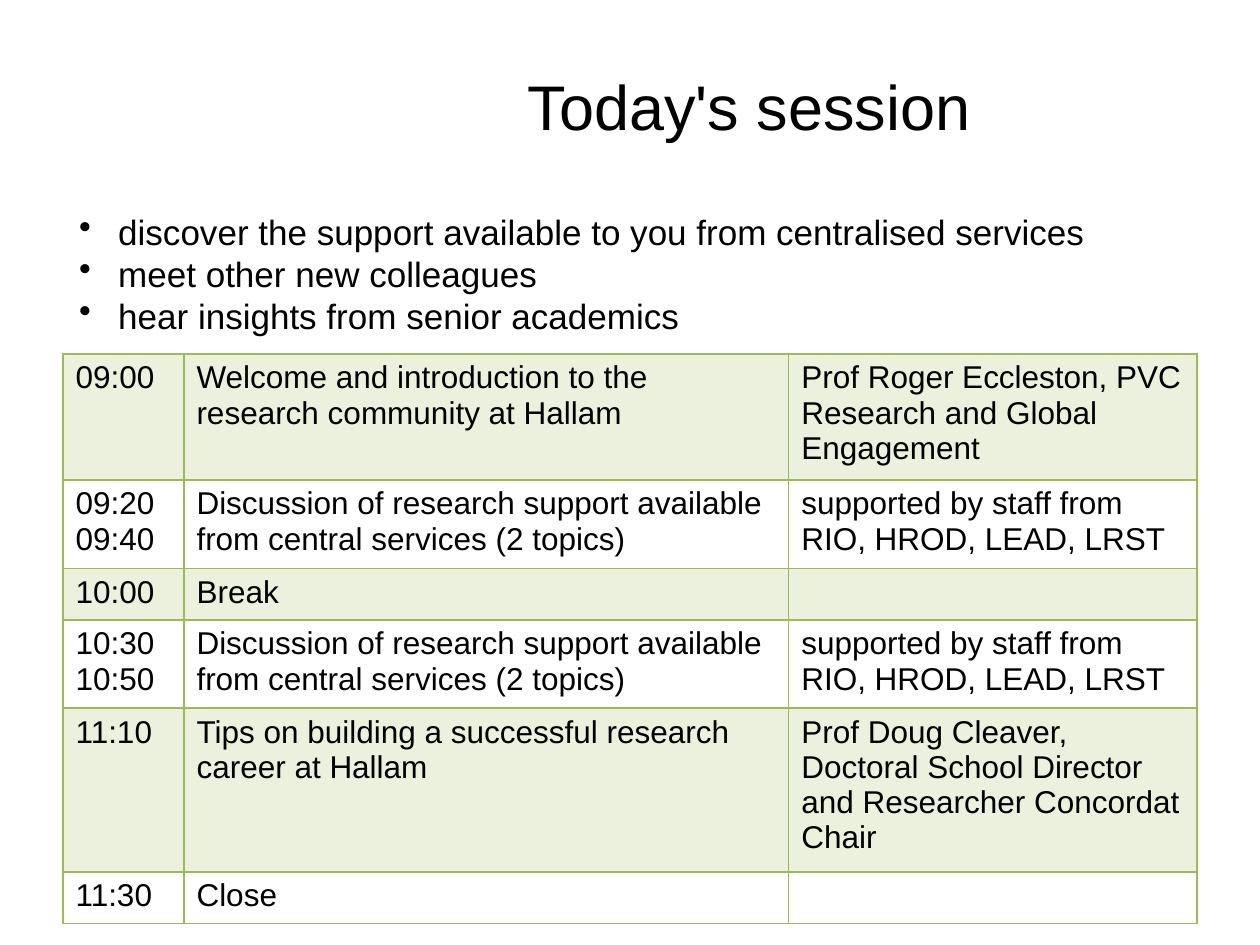
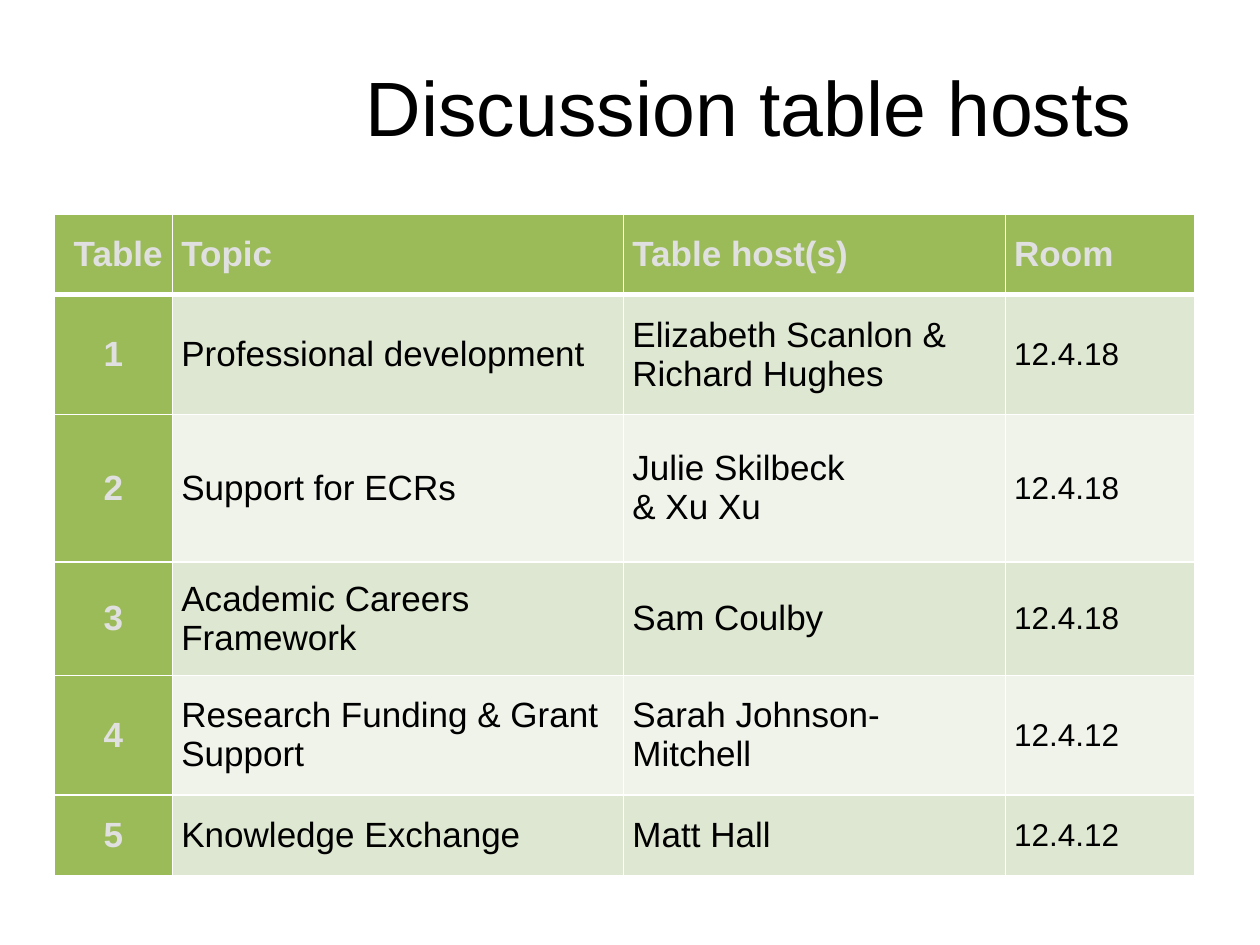
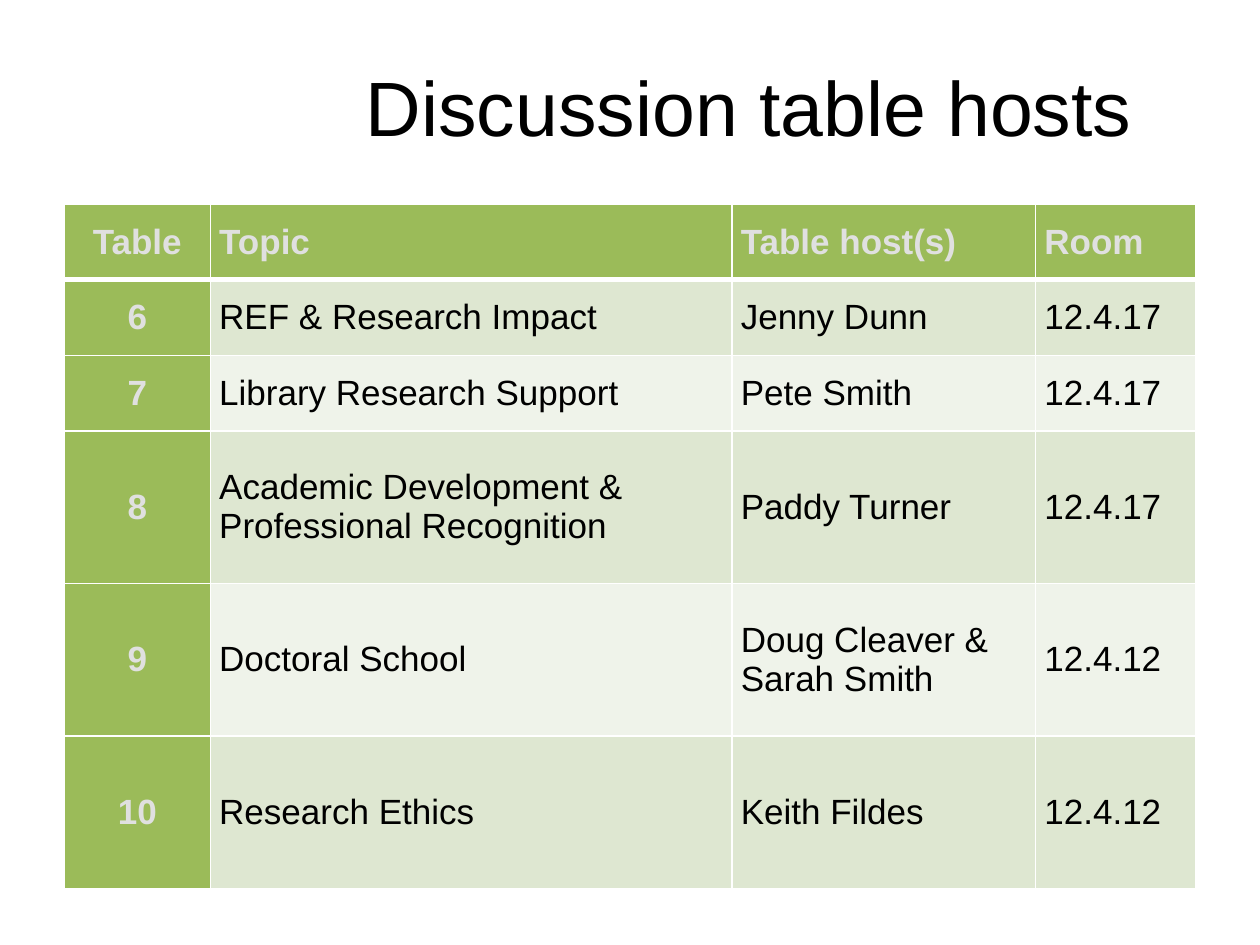
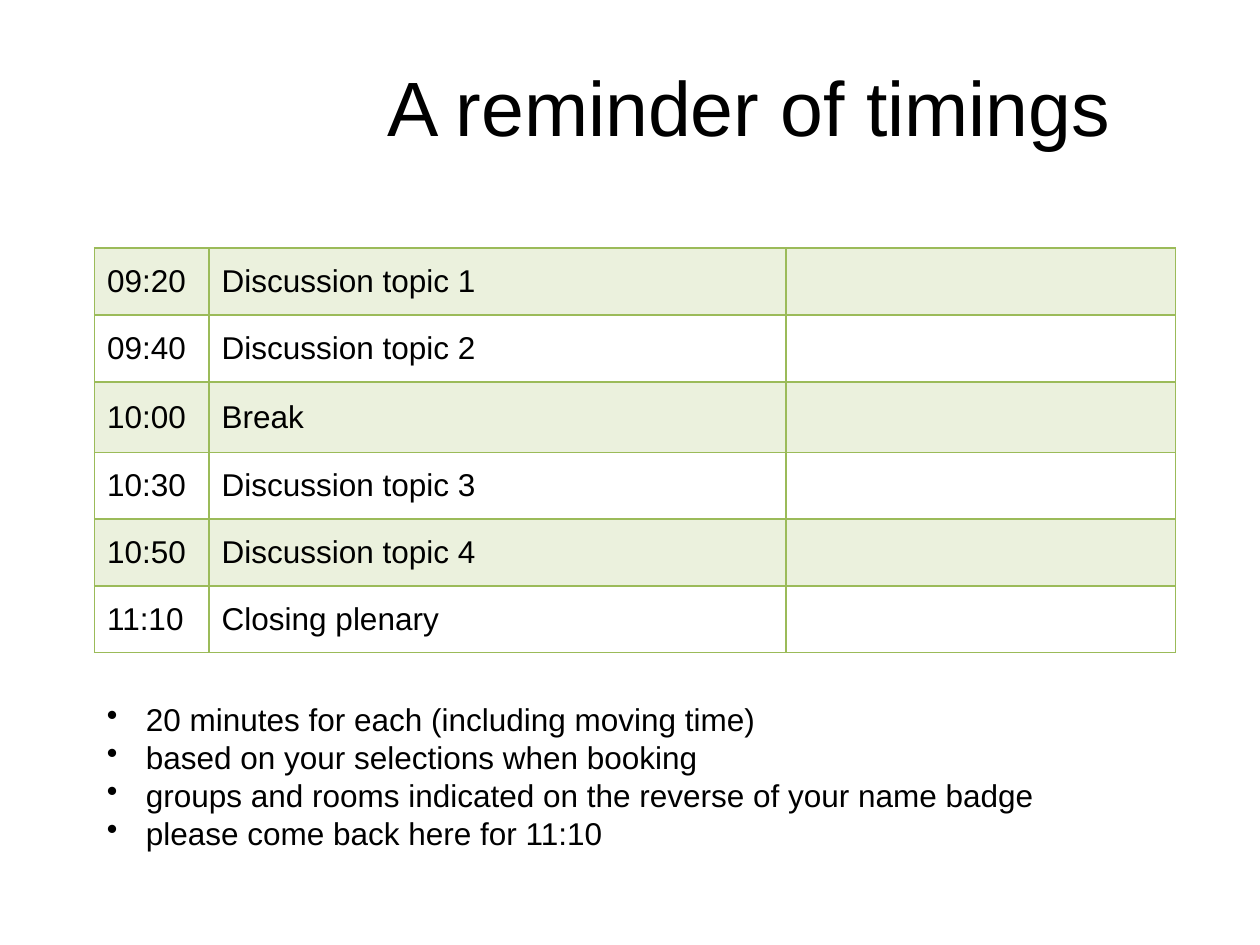
from dataclasses import dataclass

from lxml.etree import SubElement
from pptx import Presentation
from pptx.dml.color import RGBColor
from pptx.enum.text import MSO_ANCHOR, PP_ALIGN
from pptx.oxml import parse_xml
from pptx.oxml.ns import nsdecls, qn
from pptx.util import Inches, Pt


@dataclass(frozen=True)
class Theme:
    """Colours, font and type sizes shared by all slides."""

    font: str = "Arial"
    ink: str = "000000"
    green: str = "9BBB59"
    pale: str = "E0E0E0"
    rule: str = "FFFFFF"
    band_dark: str = "DEE7D1"
    band_light: str = "EFF3EA"
    tint: int = 20
    title: int = 44
    title_small: int = 36
    body: int = 20
    detail: int = 18


class Deck:
    """Holds the theme and current slide, on a grid of 100 columns by 75 rows."""

    def __init__(self, theme):
        """Open a presentation of 10 by 7.5 inches."""
        self.theme = theme
        self.show = Presentation()
        self.show.slide_width, self.show.slide_height = Inches(10), Inches(7.5)
        self.column = self.show.slide_width / 100
        self.row = self.show.slide_height / 75
        self.slide = None

    def x(self, columns):
        """Turn grid columns into a length."""
        return round(columns * self.column)

    def y(self, rows):
        """Turn grid rows into a length."""
        return round(rows * self.row)

    def add_slide(self, heading, size=None):
        """Start a blank slide and set its heading."""
        self.slide = self.show.slides.add_slide(self.show.slide_layouts[6])
        frame = self.text_frame(24, 2.1, 70.9, 12.5)
        frame.vertical_anchor = MSO_ANCHOR.MIDDLE
        frame.text = heading
        self.style(frame, size or self.theme.title, align=PP_ALIGN.CENTER)

    def text_frame(self, left, top, width, height):
        """Add a wrapping text box and return its frame."""
        box = self.slide.shapes.add_textbox(
            self.x(left), self.y(top), self.x(width), self.y(height))
        box.text_frame.word_wrap = True
        return box.text_frame

    def style(self, frame, size, colour=None, bold=False, align=PP_ALIGN.LEFT):
        """Set font and alignment on every paragraph of a frame."""
        for paragraph in frame.paragraphs:
            paragraph.alignment = align
            paragraph.font.name = self.theme.font
            paragraph.font.size = Pt(size)
            paragraph.font.bold = bold
            paragraph.font.color.rgb = RGBColor.from_string(colour or self.theme.ink)

    def bullets(self, left, top, width, height, points, size):
        """Add a bulleted list."""
        frame = self.text_frame(left, top, width, height)
        frame.text = "\n".join(points)
        for paragraph in frame.paragraphs:
            properties = paragraph._p.get_or_add_pPr()
            properties.set("marL", str(self.x(3.1)))
            properties.set("indent", str(-self.x(3.1)))
            SubElement(properties, qn("a:buChar"), char="•")
        self.style(frame, size)

    def table(self, left, top, widths, heights, entries):
        """Add an unstyled table and yield row, column and cell."""
        frame = self.slide.shapes.add_table(
            len(heights), len(widths), self.x(left), self.y(top),
            self.x(sum(widths)), self.y(sum(heights)))
        table = frame.table
        table.first_row = table.horz_banding = False
        for column, width in zip(table.columns, widths):
            column.width = self.x(width)
        for row, height in zip(table.rows, heights):
            row.height = self.y(height)
        for r, entry in enumerate(entries):
            for c, words in enumerate(entry):
                cell = table.cell(r, c)
                cell.text = words
                yield r, c, cell

    def fill(self, cell, colour, opacity=100):
        """Fill a cell with a colour, tinted when opacity is below 100."""
        cell.fill.solid()
        cell.fill.fore_color.rgb = RGBColor.from_string(colour)
        if opacity < 100:
            shade = cell._tc.tcPr.find(".//" + qn("a:srgbClr"))
            SubElement(shade, qn("a:alpha"), val=str(opacity * 1000))

    def borders(self, cell, colour, top=1, bottom=1):
        """Draw the four borders of a cell, with widths in points."""
        sides = {"lnL": 1, "lnR": 1, "lnT": top, "lnB": bottom}
        for place, (side, width) in enumerate(sides.items()):
            cell._tc.get_or_add_tcPr().insert(place, parse_xml(
                f'<a:{side} {nsdecls("a")} w="{Pt(width)}"><a:solidFill>'
                f'<a:srgbClr val="{colour}"/></a:solidFill></a:{side}>'))

    def timetable(self, left, top, widths, heights, entries, anchor=MSO_ANCHOR.TOP):
        """Add a timetable with every other row tinted."""
        for r, _, cell in self.table(left, top, widths, heights, entries):
            cell.vertical_anchor = anchor
            self.style(cell.text_frame, self.theme.detail)
            if r % 2:
                cell.fill.background()
            else:
                self.fill(cell, self.theme.green, self.theme.tint)
            self.borders(cell, self.theme.green)

    def host_table(self, left, top, widths, heights, entries, room_size):
        """Add a list of hosts with a green heading row and number column."""
        theme = self.theme
        for r, c, cell in self.table(left, top, widths, heights, entries):
            heading = r == 0 or c == 0
            cell.vertical_anchor = MSO_ANCHOR.MIDDLE
            cell.margin_left = cell.margin_right = self.x(0.7)
            cell.margin_top = cell.margin_bottom = 0
            self.style(
                cell.text_frame,
                room_size if c == 3 and not heading else theme.body,
                theme.pale if heading else theme.ink,
                heading,
                PP_ALIGN.CENTER if c == 0 else PP_ALIGN.LEFT)
            band = theme.band_dark if r % 2 else theme.band_light
            self.fill(cell, theme.green if heading else band)
            self.borders(cell, theme.rule, 3 if r == 1 else 1, 3 if r == 0 else 1)


def main():
    """Build the four slides and save them."""
    theme = Theme()
    deck = Deck(theme)
    discussion = (
        "Discussion of research support available from central services (2 topics)",
        "supported by staff from RIO, HROD, LEAD, LRST")
    host_headings = ("Topic", "Table host(s)", "Room")

    deck.add_slide("Today's session", theme.title_small)
    deck.timetable(5, 28.1, (9.6, 48, 32.4), (9.4, 6.6, 4.1, 6.6, 12.2, 4.1), [
        ("09:00", "Welcome and introduction to the research community at Hallam",
         "Prof Roger Eccleston, PVC Research and Global Engagement"),
        ("09:20\n09:40", *discussion),
        ("10:00", "Break", ""),
        ("10:30\n10:50", *discussion),
        ("11:10", "Tips on building a successful research career at Hallam",
         "Prof Doug Cleaver, Doctoral School Director and Researcher Concordat Chair"),
        ("11:30", "Close", "")])
    deck.bullets(5.3, 16.2, 89.8, 11.1, [
        "discover the support available to you from centralised services",
        "meet other new colleagues",
        "hear insights from senior academics"], theme.body)

    deck.add_slide("Discussion table hosts")
    deck.host_table(4.3, 17, (9.4, 35.8, 30.3, 15), (6.4, 9.5, 11.7, 9, 9.5, 6.4), [
        (" Table", *host_headings),
        ("1", "Professional development", "Elizabeth Scanlon & Richard Hughes", "12.4.18"),
        ("2", "Support for ECRs", "Julie Skilbeck\v& Xu Xu", "12.4.18"),
        ("3", "Academic Careers Framework", "Sam Coulby", "12.4.18"),
        ("4", "Research Funding & Grant Support", "Sarah Johnson-Mitchell", "12.4.12"),
        ("5", "Knowledge Exchange", "Matt Hall", "12.4.12")], theme.detail)

    deck.add_slide("Discussion table hosts")
    deck.host_table(5.1, 16.2, (11.6, 41.4, 24.1, 12.7), (6,) * 3 + (12.1,) * 3, [
        ("Table", *host_headings),
        ("6", "REF & Research Impact", "Jenny Dunn", "12.4.17"),
        ("7", "Library Research Support", "Pete Smith", "12.4.17"),
        ("8", "Academic Development & Professional Recognition", "Paddy Turner", "12.4.17"),
        ("9", "Doctoral School", "Doug Cleaver & Sarah Smith", "12.4.12"),
        ("10", "Research Ethics", "Keith Fildes", "12.4.12")], theme.body)

    deck.add_slide("A reminder of timings")
    deck.timetable(7.5, 19.7, (9.1, 45.8, 30.9), (5.3, 5.3, 5.6, 5.3, 5.3, 5.3), [
        ("09:20", "Discussion topic 1", ""),
        ("09:40", "Discussion topic 2", ""),
        ("10:00", "Break", ""),
        ("10:30", "Discussion topic 3", ""),
        ("10:50", "Discussion topic 4", ""),
        ("11:10", "Closing plenary", "")], MSO_ANCHOR.MIDDLE)
    deck.bullets(7.5, 55.1, 85.8, 13.1, [
        "20 minutes for each (including moving time)",
        "based on your selections when booking",
        "groups and rooms indicated on the reverse of your name badge",
        "please come back here for 11:10"], theme.detail)

    deck.show.save("out.pptx")


if __name__ == "__main__":
    main()
